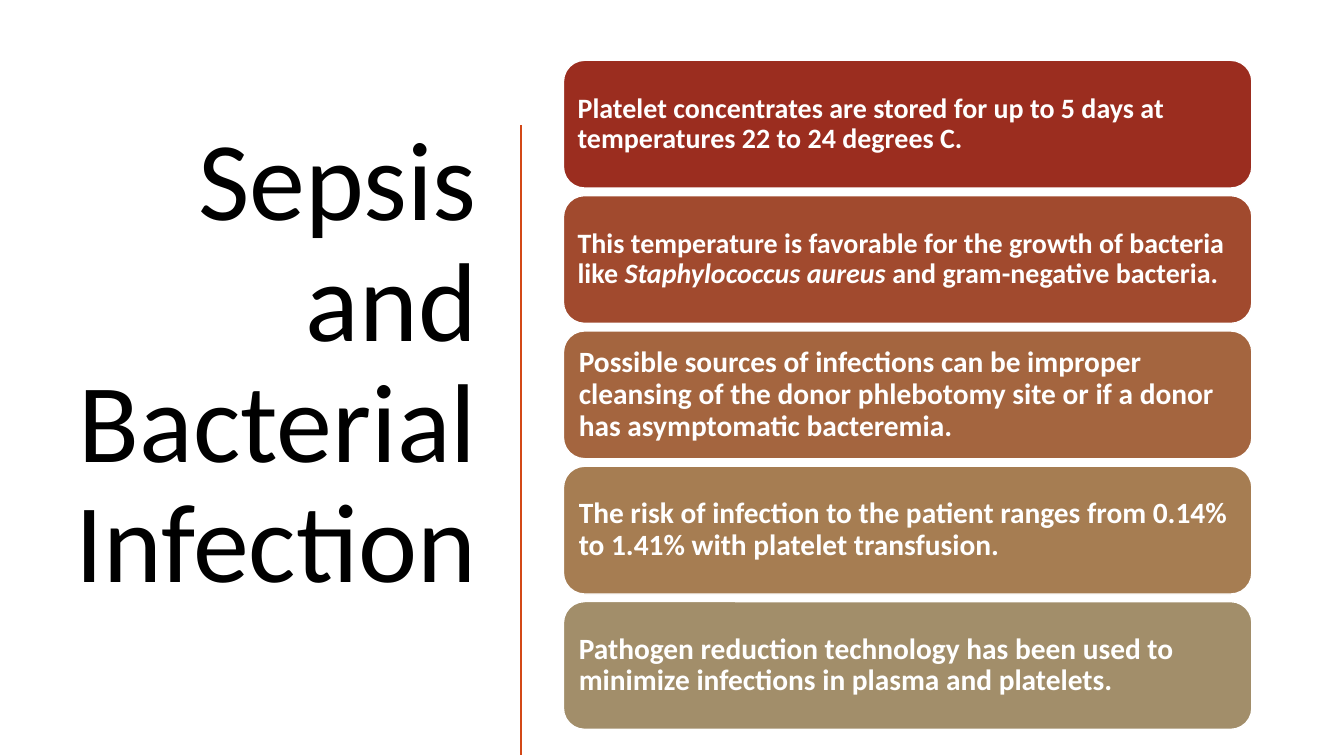
from lxml import etree
from pptx import Presentation
from pptx.dml.color import RGBColor
from pptx.enum.shapes import MSO_CONNECTOR, MSO_SHAPE
from pptx.enum.text import MSO_ANCHOR, MSO_AUTO_SIZE, PP_ALIGN
from pptx.oxml.ns import qn
from pptx.util import Cm, Pt

ROUNDED = MSO_SHAPE.ROUNDED_RECTANGLE
STRAIGHT = MSO_CONNECTOR.STRAIGHT
MIDDLE = MSO_ANCHOR.MIDDLE
NO_AUTOFIT = MSO_AUTO_SIZE.NONE
LEFT, RIGHT = PP_ALIGN.LEFT, PP_ALIGN.RIGHT

BLACK = RGBColor(0x00, 0x00, 0x00)
WHITE = RGBColor(0xFF, 0xFF, 0xFF)
ORANGE = RGBColor(0xD3, 0x48, 0x17)
BRICK = RGBColor(0x9B, 0x2D, 0x1F)
RUST = RGBColor(0xA1, 0x4A, 0x2E)
COPPER = RGBColor(0xA4, 0x65, 0x3F)
BRONZE = RGBColor(0xA6, 0x7D, 0x52)
SAND = RGBColor(0xA2, 0x8E, 0x6A)

FONT = "Calibri"
CARD_TOP, CARD_PITCH = 1.52, 3.41

FACTS = [
    (BRICK, 20, 0.2, ["Platelet concentrates are stored for up to 5 days at "
                      "temperatures 22 to 24 degrees C."]),
    (RUST, 20, 0.2, ["This temperature is favorable for the growth of bacteria like ",
                     "Staphylococcus aureus",
                     " and gram-negative bacteria."]),
    (COPPER, 21, 0.23, ["Possible sources of infections can be improper cleansing of the "
                        "donor phlebotomy site or if a donor has asymptomatic bacteremia."]),
    (BRONZE, 21, 0.23, ["The risk of infection to the patient ranges from 0.14% to 1.41% "
                        "with platelet transfusion."]),
    (SAND, 21, 0.23, ["Pathogen reduction technology has been used to minimize "
                      "infections in plasma and platelets."]),
]


def write_text(frame, parts, size, color, align=LEFT, bold=False,
               insets=(0.25, 0.13, 0.25, 0.13)):
    frame.word_wrap = True
    frame.auto_size = NO_AUTOFIT
    frame.vertical_anchor = MIDDLE
    (frame.margin_left, frame.margin_top,
     frame.margin_right, frame.margin_bottom) = map(Cm, insets)
    paragraph = frame.paragraphs[0]
    paragraph.alignment = align
    paragraph.line_spacing = 0.9
    for index, part in enumerate(parts):
        run = paragraph.add_run()
        run.text = part
        run.font.name = FONT
        run.font.size = Pt(size)
        run.font.bold = bold
        run.font.italic = index % 2 == 1
        run.font.color.rgb = color


def set_title(slide):
    title = slide.shapes.title
    title.left, title.top = Cm(1.32), Cm(2.97)
    title.width, title.height = Cm(10.95), Cm(15.52)
    write_text(title.text_frame, ["Sepsis and Bacterial Infection"], 80, BLACK,
               align=RIGHT, insets=(0.25, 0.13, 0.25, 3.18))


def add_divider(slide):
    divider = slide.shapes.add_connector(
        STRAIGHT, Cm(13.13), Cm(3.15), Cm(13.13), Cm(19.02))
    divider.line.color.rgb = ORANGE
    divider.line.width = Pt(2)
    etree.SubElement(divider._element.spPr, qn("a:effectLst"))


def add_fact_card(slide, top, fill, size, inset, parts):
    card = slide.shapes.add_shape(ROUNDED, Cm(14.2), Cm(top), Cm(17.35), Cm(3.22))
    card.shadow.inherit = False
    card.fill.solid()
    card.fill.fore_color.rgb = fill
    card.line.color.rgb = WHITE
    card.line.width = Pt(1)
    write_text(card.text_frame, parts, size, WHITE, bold=True, insets=(inset,) * 4)


def main():
    presentation = Presentation()
    presentation.slide_width = Cm(33.87)
    presentation.slide_height = Cm(19.05)
    slide = presentation.slides.add_slide(presentation.slide_layouts[5])
    set_title(slide)
    add_divider(slide)
    for row, fact in enumerate(FACTS):
        add_fact_card(slide, CARD_TOP + row * CARD_PITCH, *fact)
    presentation.save("out.pptx")


if __name__ == "__main__":
    main()
